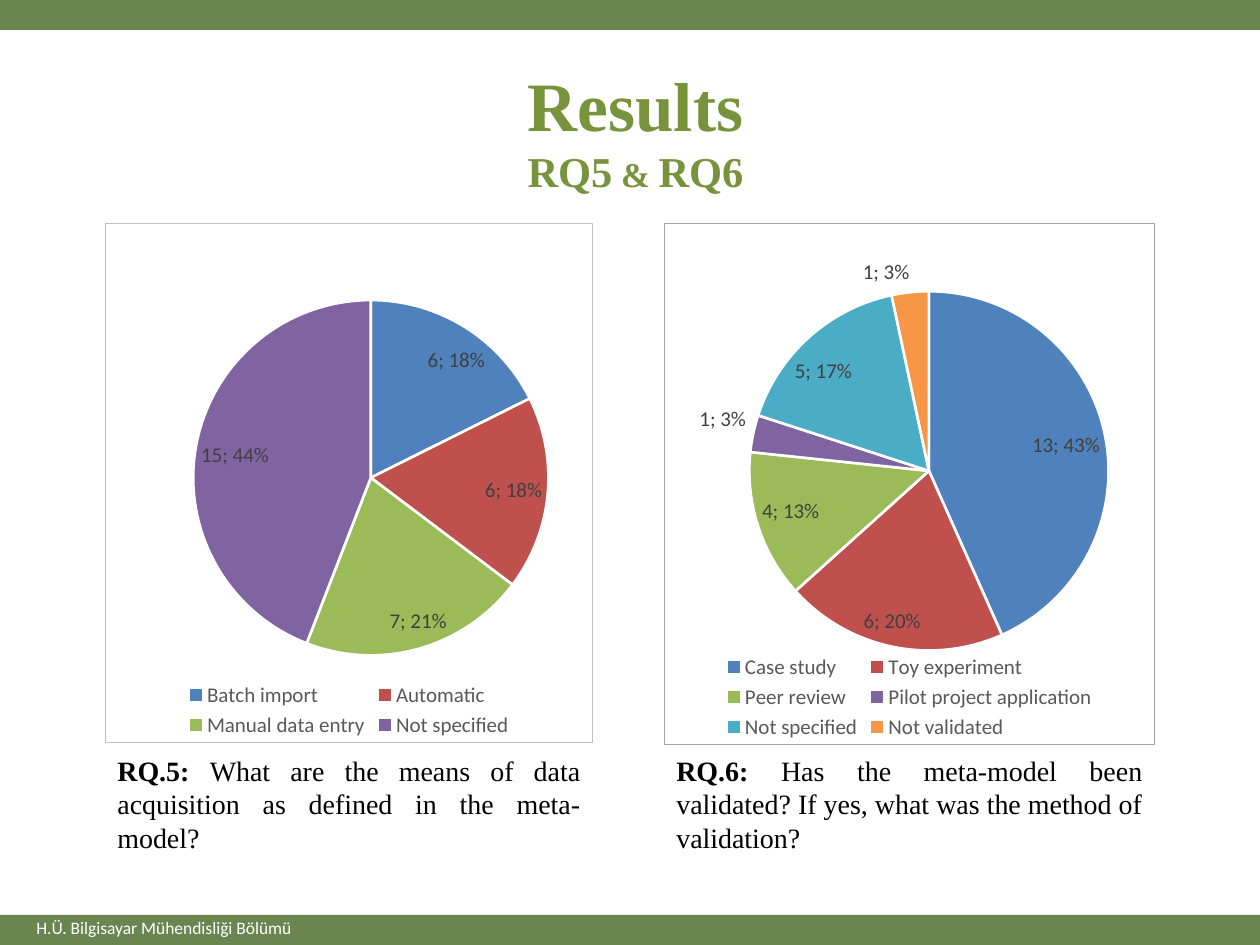
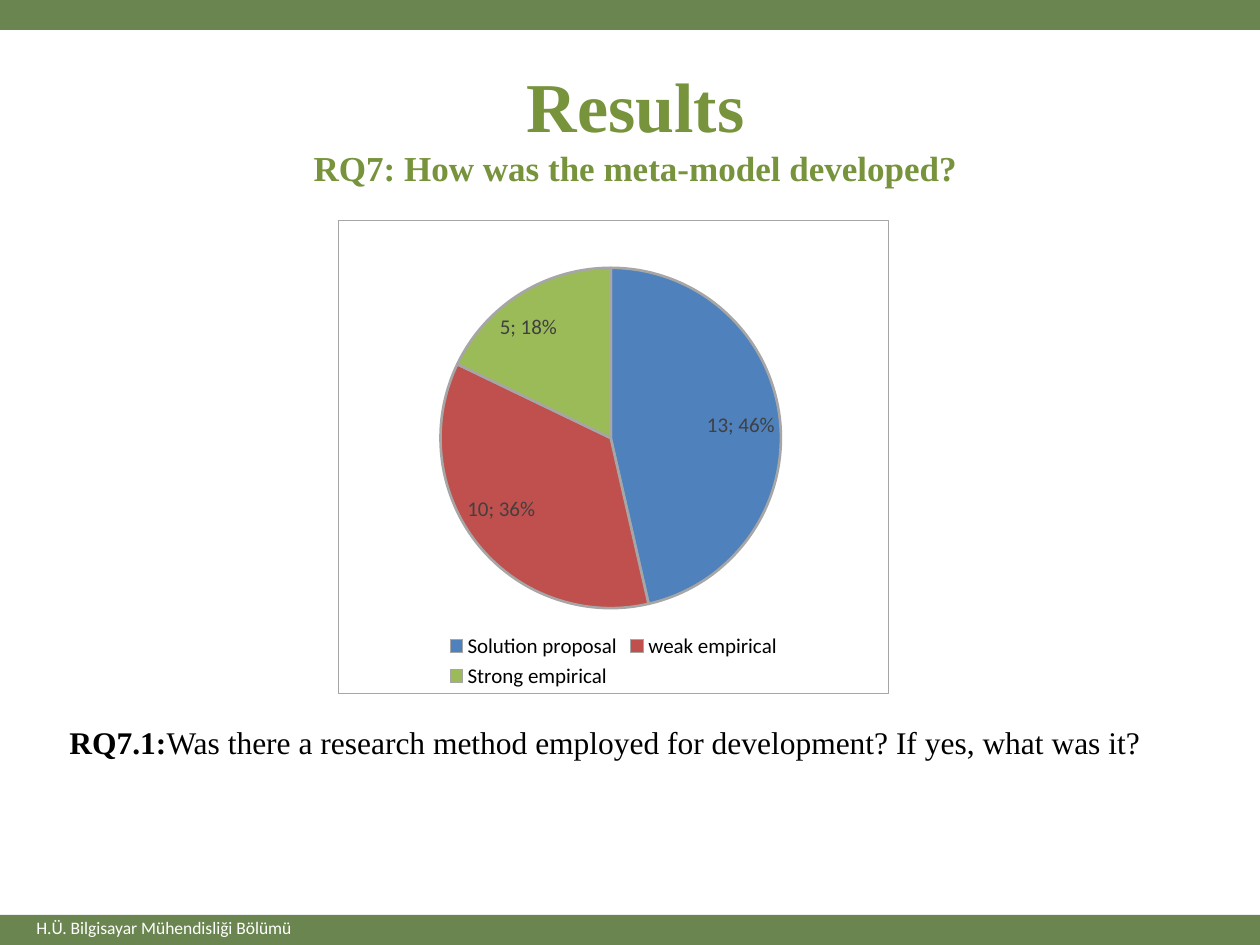
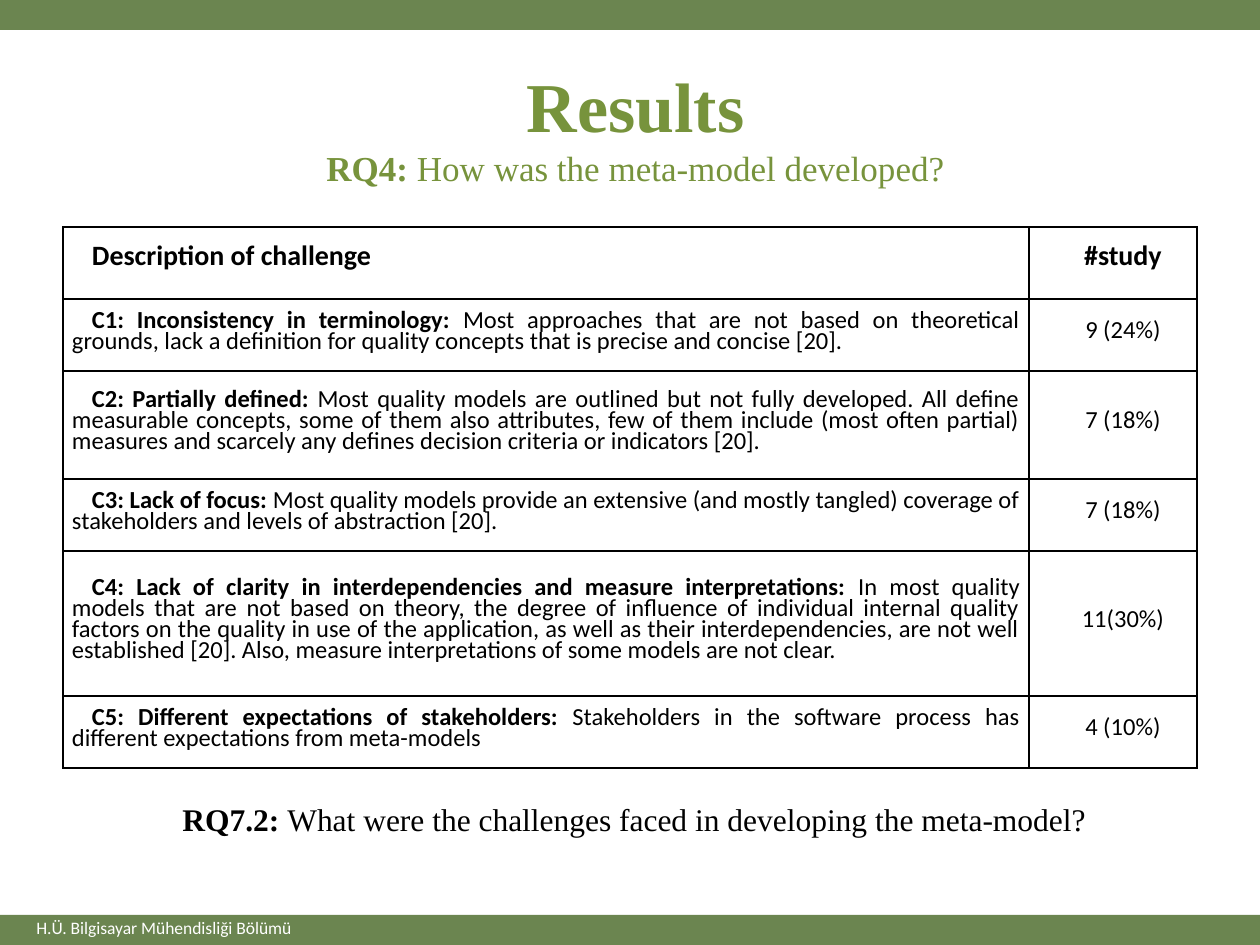
import pptx
import pptx.chart.data
import pptx.dml.color
import pptx.enum.chart
import pptx.enum.shapes
import pptx.enum.text
import pptx.oxml
import pptx.oxml.ns
import pptx.util

RGB = pptx.dml.color.RGBColor
ALIGN = pptx.enum.text.PP_ALIGN
ANCHOR = pptx.enum.text.MSO_ANCHOR
Pt = pptx.util.Pt
qn = pptx.oxml.ns.qn

# Shared look
BAND_GREEN = RGB(0x6B, 0x85, 0x50)
TITLE_GREEN = RGB(0x77, 0x93, 0x3C)
WHITE = RGB(0xFF, 0xFF, 0xFF)
BLACK = RGB(0, 0, 0)
LEGEND_GREY = RGB(0x59, 0x59, 0x59)
LABEL_GREY = RGB(0x40, 0x40, 0x40)
LIGHT_GREY = RGB(0xBF, 0xBF, 0xBF)
MID_GREY = RGB(0xA6, 0xA6, 0xA6)
SLICES = [RGB(0x4F, 0x81, 0xBD), RGB(0xC0, 0x50, 0x4D), RGB(0x9B, 0xBB, 0x59),
          RGB(0x80, 0x64, 0xA2), RGB(0x4B, 0xAC, 0xC6), RGB(0xF7, 0x96, 0x46)]
SERIF, SANS = "Times New Roman", "Calibri"
SLIDE_W, SLIDE_H, BAND_H = 1260, 945, 30
FOOTER = "H.Ü. Bilgisayar Mühendisliği Bölümü"

# Content: runs are (text, size, bold); boxes are left, top, width, height in px
PAGES = [
    {
        "title": [("Results", 39.6, True), ("\n", 0, True), ("RQ5", 24.3, True),
                  (" & ", 19.8, True), ("RQ6", 24.3, True)],
        "pies": [
            {"box": (105, 223, 488, 520), "plot": (0.18, 0.1, 0.73, 0.78),
             "border": LIGHT_GREY, "edge": WHITE, "legend": LEGEND_GREY,
             "counts": {"Batch import": 6, "Automatic": 6,
                        "Manual data entry": 7, "Not specified": 15}},
            {"box": (664, 223, 491, 522), "plot": (0.17, 0.13, 0.74, 0.69),
             "border": MID_GREY, "edge": WHITE, "legend": LEGEND_GREY,
             "counts": {"Case study": 13, "Toy experiment": 6, "Peer review": 4,
                        "Pilot project application": 1, "Not specified": 5,
                        "Not validated": 1}},
        ],
        "questions": [
            ((105, 747, 488, 115), ALIGN.JUSTIFY,
             [("RQ.5: ", 16, True),
              ("What are the means of data acquisition as defined in the meta-model?", 16, False)]),
            ((664, 747, 491, 115), ALIGN.JUSTIFY,
             [("RQ.6: ", 16, True),
              ("Has the meta-model been validated? If yes, what was the method of validation?",
               16, False)]),
        ],
    },
    {
        "title": [("Results", 40, True), ("\n", 0, True),
                  ("RQ7: How was the meta-model developed?", 20, True)],
        "pies": [
            {"box": (338, 220, 551, 474), "plot": (0.18, 0.1, 0.63, 0.72),
             "border": MID_GREY, "edge": MID_GREY, "legend": BLACK,
             "counts": {"Solution proposal": 13, "weak empirical": 10,
                        "Strong empirical": 5}},
        ],
        "questions": [
            ((57, 717, 1140, 50), ALIGN.LEFT,
             [("RQ7.1:", 18, True),
              ("Was there a research method employed for development? If yes, what was it?",
               18, False)]),
        ],
    },
    {
        "title": [("Results", 40, True), ("\n", 0, True), ("RQ4: ", 20, True),
                  ("How was the meta-model developed?", 20, False)],
        "challenges": [
            ("C1: Inconsistency in terminology: ",
             "Most approaches that are not based on theoretical grounds, lack a definition for "
             "quality concepts that is precise and concise [20].", "9 (24%)", 72),
            ("C2: Partially defined: ",
             "Most quality models are outlined but not fully developed. All define measurable "
             "concepts, some of them also attributes, few of them include (most often partial) "
             "measures and scarcely any defines decision criteria or indicators [20].",
             "7 (18%)", 108),
            ("C3: Lack of focus: ",
             "Most quality models provide an extensive (and mostly tangled) coverage of "
             "stakeholders and levels of abstraction [20].", "7 (18%)", 72),
            ("C4: Lack of clarity in interdependencies and measure interpretations: ",
             "In most quality models that are not based on theory, the degree of influence of "
             "individual internal quality factors on the quality in use of the application, as "
             "well as their interdependencies, are not well established [20]. Also, measure "
             "interpretations of some models are not clear.", "11(30%)", 145),
            ("C5: Different expectations of stakeholders: ",
             "Stakeholders in the software process has different expectations from meta-models",
             "4 (10%)", 72),
        ],
        "questions": [
            ((170, 794, 932, 50), ALIGN.LEFT,
             [("RQ7.2: ", 18, True),
              ("What were the challenges faced in developing the meta-model?", 18, False)]),
        ],
    },
]
TABLE_HEAD = ("Description of challenge", "#study", 72)
TABLE_LEFT, TABLE_TOP = 63, 227
TABLE_COLUMNS = (966, 168)


def px(length):
    return pptx.util.Emu(round(length * 914400 / 126))


def xml(text):
    namespaces = pptx.oxml.ns.nsdecls("a", "c")
    return pptx.oxml.parse_xml(text.replace(">", f" {namespaces}>", 1))


def write(paragraph, runs, font, color, align):
    paragraph.alignment = align
    paragraph.font.name = font
    paragraph.font.color.rgb = color
    for text, size, bold in runs:
        if text == "\n":
            paragraph.add_line_break()
            continue
        run = paragraph.add_run()
        run.text = text
        run.font.size = Pt(size)
        run.font.bold = bold


def add_text(slide, box, runs, font, color, align=ALIGN.LEFT, wrap=True):
    frame = slide.shapes.add_textbox(*map(px, box)).text_frame
    frame.word_wrap = wrap
    write(frame.paragraphs[0], runs, font, color, align)
    return frame


def add_common(slide, title):
    # Bands, footer and title
    for top in (0, SLIDE_H - BAND_H):
        band = slide.shapes.add_shape(pptx.enum.shapes.MSO_SHAPE.RECTANGLE,
                                      *map(px, (0, top, SLIDE_W, BAND_H)))
        band.shadow.inherit = False
        band.fill.solid()
        band.fill.fore_color.rgb = BAND_GREEN
        band.line.fill.background()
    add_text(slide, (24, 911, 285, 34), [(FOOTER, 10, False)], SANS, WHITE, wrap=False)
    heading = add_text(slide, (39, 38, 1193, 157), title, SERIF, TITLE_GREEN, ALIGN.CENTER)
    heading.margin_top = px(24)


def set_font(font, size, color):
    font.name, font.size, font.color.rgb = SANS, Pt(size), color


def add_pie(slide, pie):
    counts = pptx.chart.data.CategoryChartData()
    counts.categories = list(pie["counts"])
    counts.add_series("Series 1", list(pie["counts"].values()))
    chart = slide.shapes.add_chart(pptx.enum.chart.XL_CHART_TYPE.PIE,
                                   *map(px, pie["box"]), counts).chart
    chart.has_title = False
    set_font(chart.font, 10, BLACK)
    chart.has_legend = True
    chart.legend.position = pptx.enum.chart.XL_LEGEND_POSITION.BOTTOM
    chart.legend.include_in_layout = False
    set_font(chart.legend.font, 12, pie["legend"])

    # Slices and their labels
    chart.plots[0].vary_by_categories = True
    series = chart.plots[0].series[0]
    for index, color in enumerate(SLICES[:len(pie["counts"])]):
        look = series.points[index].format
        look.fill.solid()
        look.fill.fore_color.rgb = color
        look.line.color.rgb = pie["edge"]
        look.line.width = Pt(1.5)
    labels = series.data_labels
    labels.show_value = True
    labels.show_percentage = True
    labels.position = pptx.enum.chart.XL_LABEL_POSITION.BEST_FIT
    set_font(labels.font, 12, LABEL_GREY)
    bubble = series.data_labels._element.find(qn("c:showBubbleSize"))
    bubble.addnext(xml("<c:separator>; </c:separator>"))

    # Place of the pie and the frame around the chart
    body = chart.element.find(qn("c:chart"))
    area = body.find(qn("c:plotArea"))
    for layout in area.findall(qn("c:layout")):
        area.remove(layout)
    places = "".join(f'<c:{name} val="{value}"/>' for name, value in zip("xywh", pie["plot"]))
    area.insert(0, xml('<c:layout><c:manualLayout><c:layoutTarget val="inner"/>'
                       '<c:xMode val="edge"/><c:yMode val="edge"/>'
                       f'{places}</c:manualLayout></c:layout>'))
    body.addnext(xml(f'<c:spPr><a:solidFill><a:srgbClr val="{WHITE}"/></a:solidFill>'
                     f'<a:ln w="{Pt(0.75)}"><a:solidFill><a:srgbClr val="{pie["border"]}"/>'
                     '</a:solidFill></a:ln></c:spPr>'))


def fill_cell(cell, runs, align):
    cell.fill.background()
    cell.vertical_anchor = ANCHOR.MIDDLE
    cell.margin_left = cell.margin_right = px(9)
    cell.margin_top = cell.margin_bottom = 0
    paragraph = cell.text_frame.paragraphs[0]
    paragraph.line_spacing = Pt(12)
    write(paragraph, runs, SANS, BLACK, align)
    paragraph._p.get_or_add_pPr().set("indent", str(px(20)))
    for index, side in enumerate("LRTB"):
        cell._tc.get_or_add_tcPr().insert(index, xml(
            f'<a:ln{side} w="{Pt(1)}"><a:solidFill><a:srgbClr val="{BLACK}"/>'
            f'</a:solidFill></a:ln{side}>'))


def add_challenges(slide, challenges):
    heading, count_heading, head_height = TABLE_HEAD
    rows = [([(heading, 16, True)], [(count_heading, 16, True)], head_height)]
    for name, description, count, height in challenges:
        rows.append(([(name, 14, True), (description, 14, False)],
                     [(count, 14, False)], height))
    box = (TABLE_LEFT, TABLE_TOP, sum(TABLE_COLUMNS), sum(row[2] for row in rows))
    table = slide.shapes.add_table(len(rows), len(TABLE_COLUMNS), *map(px, box)).table
    for column, width in zip(table.columns, TABLE_COLUMNS):
        column.width = px(width)
    for index, (description, count, height) in enumerate(rows):
        table.rows[index].height = px(height)
        fill_cell(table.cell(index, 0), description, ALIGN.JUSTIFY)
        fill_cell(table.cell(index, 1), count, ALIGN.CENTER)


def main():
    deck = pptx.Presentation()
    deck.slide_width, deck.slide_height = px(SLIDE_W), px(SLIDE_H)
    for page in PAGES:
        slide = deck.slides.add_slide(deck.slide_layouts[6])
        add_common(slide, page["title"])
        for pie in page.get("pies", []):
            add_pie(slide, pie)
        if "challenges" in page:
            add_challenges(slide, page["challenges"])
        for box, align, runs in page["questions"]:
            add_text(slide, box, runs, SERIF, BLACK, align)
    deck.save("out.pptx")


if __name__ == "__main__":
    main()
